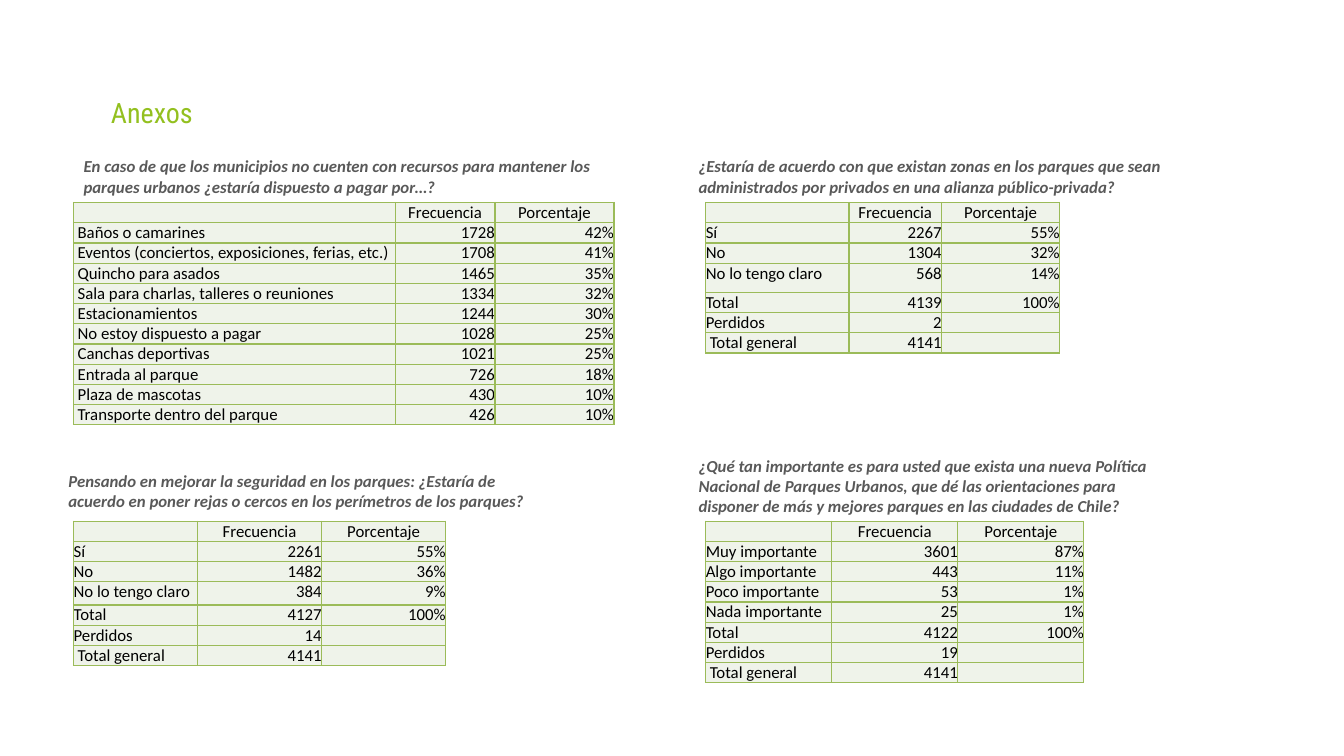
import lxml.etree
import pptx
import pptx.dml.color
import pptx.enum.text
import pptx.oxml.ns
import pptx.util

Inches = pptx.util.Inches
Pt = pptx.util.Pt
qn = pptx.oxml.ns.qn
ALIGN = pptx.enum.text.PP_ALIGN
ANCHOR = pptx.enum.text.MSO_ANCHOR
COLORS = {"title": "93C01F", "question": "595959", "answer": "000000",
          "cell": "EFF3EA", "border": "9BBB59"}
FONTS = {
    "title": {"name": "Roboto Condensed", "size": Pt(20), "bold": False},
    "question": {"name": "Calibri", "size": Pt(12), "bold": True, "italic": True},
    "answer": {"name": "Calibri", "size": Pt(12), "bold": False},
}
NO_MARGINS = {f"margin_{side}": 0 for side in ("left", "top", "right", "bottom")}
ROW_HEIGHT = 0.2
INDENT = 0.04
HEADER = ("", "Frecuencia", "Porcentaje")
GRAND_TOTAL = "Total general"

SURVEYS = [
    {"question": "En caso de que los municipios no cuenten con recursos para mantener los "
                 "parques urbanos ¿estaría dispuesto a pagar por…?",
     "question_box": (0.73, 1.5, 5.35, 0.5), "corner": (0.73, 2.01),
     "widths": (3.19, 0.99, 1.18), "tall_rows": {}, "indented": True,
     "answers": [("Baños o camarines", "1728", "42%"),
                 ("Eventos (conciertos, exposiciones, ferias, etc.)", "1708", "41%"),
                 ("Quincho para asados", "1465", "35%"),
                 ("Sala para charlas, talleres o reuniones", "1334", "32%"),
                 ("Estacionamientos", "1244", "30%"),
                 ("No estoy dispuesto a pagar", "1028", "25%"),
                 ("Canchas deportivas", "1021", "25%"),
                 ("Entrada al parque", "726", "18%"),
                 ("Plaza de mascotas", "430", "10%"),
                 ("Transporte dentro del parque", "426", "10%")]},
    {"question": "¿Estaría de acuerdo con que existan zonas en los parques que sean "
                 "administrados por privados en una alianza público-privada?",
     "question_box": (6.83, 1.5, 5, 0.5), "corner": (7, 2.01),
     "widths": (1.42, 0.92, 1.17), "tall_rows": {3: 0.29}, "indented": False,
     "answers": [("Sí", "2267", "55%"), ("No", "1304", "32%"),
                 ("No lo tengo claro", "568", "14%"), ("Total", "4139", "100%"),
                 ("Perdidos", "2", ""), (GRAND_TOTAL, "4141", "")]},
    {"question": "Pensando en mejorar la seguridad en los parques: ¿Estaría de "
                 "acuerdo en poner rejas o cercos en los perímetros de los parques?",
     "question_box": (0.58, 4.62, 4.81, 0.5), "corner": (0.73, 5.17),
     "widths": (1.23,) * 3, "tall_rows": {3: 0.23}, "indented": False,
     "answers": [("Sí", "2261", "55%"), ("No", "1482", "36%"),
                 ("No lo tengo claro", "384", "9%"), ("Total", "4127", "100%"),
                 ("Perdidos", "14", ""), (GRAND_TOTAL, "4141", "")]},
    {"question": "¿Qué tan importante es para usted que exista una nueva Política "
                 "Nacional de Parques Urbanos, que dé las orientaciones para "
                 "disponer de más y mejores parques en las ciudades de Chile?",
     "question_box": (6.83, 4.47, 4.81, 0.71), "corner": (7, 5.17),
     "widths": (1.25,) * 3, "tall_rows": {}, "indented": False,
     "answers": [("Muy importante", "3601", "87%"), ("Algo importante", "443", "11%"),
                 ("Poco importante", "53", "1%"), ("Nada importante", "25", "1%"),
                 ("Total", "4122", "100%"), ("Perdidos", "19", ""),
                 (GRAND_TOTAL, "4141", "")]},
]


def apply(target, values):
    """Set every attribute in values on target."""
    for attribute, value in values.items():
        setattr(target, attribute, value)


class SurveySlide:
    """Hold the current slide and its text and table styles."""

    def __init__(self, slide):
        """Keep the slide to draw on."""
        self.slide = slide

    def add_words(self, paragraph, text, role, align=ALIGN.LEFT):
        """Put styled text in a paragraph."""
        paragraph.alignment = align
        if not text:
            size = str(int(FONTS[role]["size"].pt * 100))
            lxml.etree.SubElement(paragraph._p, qn("a:endParaRPr"), sz=size)
            return
        run = paragraph.add_run()
        run.text = text
        apply(run.font, FONTS[role])
        run.font.color.rgb = pptx.dml.color.RGBColor.from_string(COLORS[role])

    def title(self, text, box):
        """Place and fill the title placeholder."""
        heading = self.slide.shapes.title
        apply(heading, dict(zip(("left", "top", "width", "height"), map(Inches, box))))
        apply(heading.text_frame, {
            **NO_MARGINS, "word_wrap": True, "vertical_anchor": ANCHOR.TOP,
            "auto_size": pptx.enum.text.MSO_AUTO_SIZE.SHAPE_TO_FIT_TEXT})
        self.add_words(heading.text_frame.paragraphs[0], text, "title")

    def question(self, text, box):
        """Add a survey question above its table."""
        frame = self.slide.shapes.add_textbox(*map(Inches, box)).text_frame
        apply(frame, {"word_wrap": True,
                      "auto_size": pptx.enum.text.MSO_AUTO_SIZE.SHAPE_TO_FIT_TEXT})
        self.add_words(frame.paragraphs[0], text, "question")

    def border(self, cell):
        """Draw the four borders of a cell."""
        properties = cell._tc.get_or_add_tcPr()
        for side in ("lnL", "lnR", "lnT", "lnB"):
            line = lxml.etree.SubElement(properties, qn(f"a:{side}"), w=str(Pt(1)))
            fill = lxml.etree.SubElement(line, qn("a:solidFill"))
            lxml.etree.SubElement(fill, qn("a:srgbClr"), val=COLORS["border"])

    def cell(self, cell, text, align, anchor, indent):
        """Format and fill one table cell."""
        apply(cell, {**NO_MARGINS, "margin_left": Inches(indent), "vertical_anchor": anchor})
        self.border(cell)
        cell.fill.solid()
        cell.fill.fore_color.rgb = pptx.dml.color.RGBColor.from_string(COLORS["cell"])
        self.add_words(cell.text_frame.paragraphs[0], text, "answer", align)

    def table(self, corner, widths, answers, tall_rows, indented):
        """Add a frequency table."""
        rows = [HEADER, *answers]
        heights = [tall_rows.get(index, ROW_HEIGHT) for index in range(len(rows))]
        size = (sum(widths), sum(heights))
        table = self.slide.shapes.add_table(
            len(rows), len(widths), *map(Inches, (*corner, *size))).table
        apply(table, {"first_row": False, "horz_banding": False})
        for column, width in zip(table.columns, widths):
            column.width = Inches(width)
        for r, (values, height) in enumerate(zip(rows, heights)):
            table.rows[r].height = Inches(height)
            anchor = ANCHOR.BOTTOM if r == 0 or indented else ANCHOR.TOP
            for c, text in enumerate(values):
                align = ALIGN.CENTER if r == 0 else ALIGN.RIGHT if c else ALIGN.LEFT
                inset = c == 0 and (indented or text == GRAND_TOTAL)
                self.cell(table.cell(r, c), text, align, anchor, INDENT if inset else 0)


def main():
    """Build and save the annex slide."""
    deck = pptx.Presentation()
    apply(deck, {"slide_width": Inches(13.33), "slide_height": Inches(7.5)})
    annex = SurveySlide(deck.slides.add_slide(deck.slide_layouts.get_by_name("Title Only")))
    annex.title("Anexos", (1.1, 0.95, 11.47, 0.34))
    for survey in SURVEYS:
        annex.table(survey["corner"], survey["widths"], survey["answers"],
                    survey["tall_rows"], survey["indented"])
        annex.question(survey["question"], survey["question_box"])
    deck.save("out.pptx")


if __name__ == "__main__":
    main()
